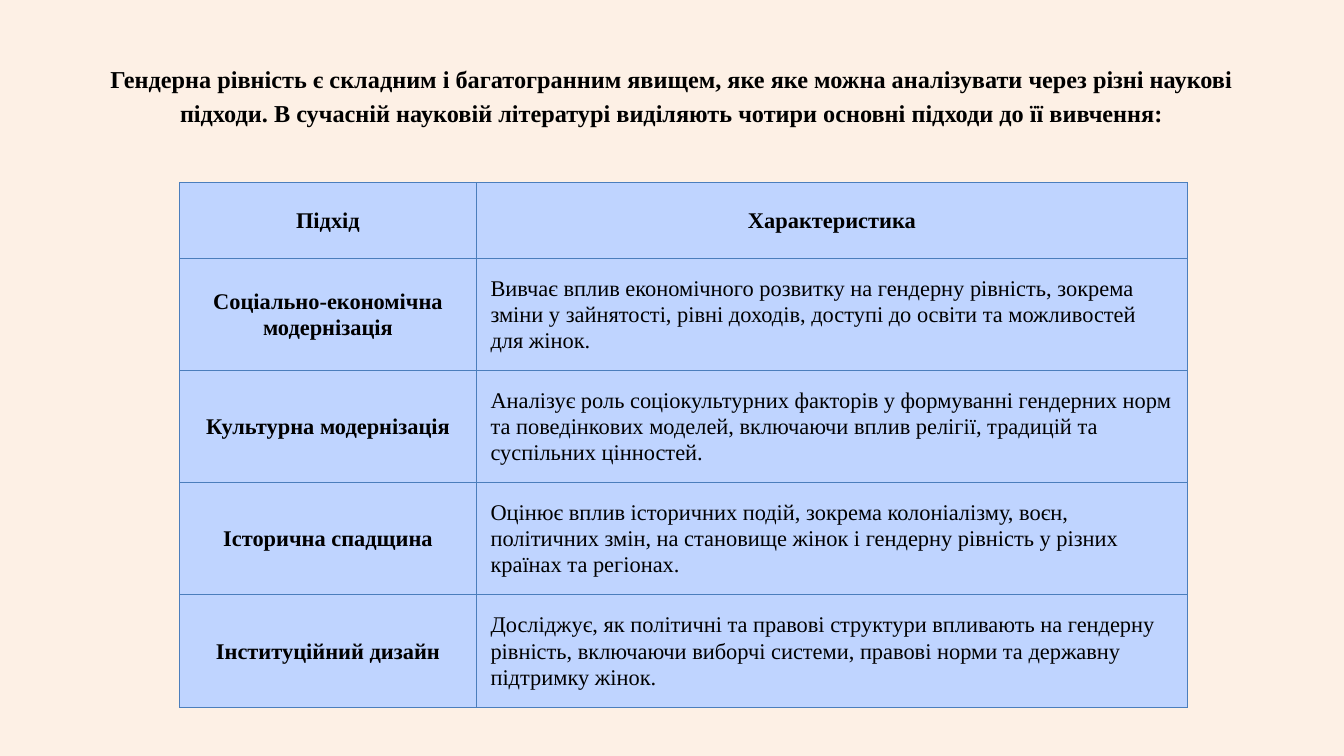
import dataclasses

import lxml.etree
import pptx
import pptx.dml.color
import pptx.enum.text
import pptx.oxml.ns
import pptx.util

Inches = pptx.util.Inches
Pt = pptx.util.Pt
ALIGN = pptx.enum.text.PP_ALIGN
ANCHOR = pptx.enum.text.MSO_ANCHOR

TITLE = (
    "Гендерна рівність є складним і багатогранним явищем, яке яке можна аналізувати "
    "через різні наукові підходи. В сучасній науковій літературі виділяють чотири "
    "основні підходи до її вивчення:"
)
APPROACHES = [
    ("Підхід", "Характеристика"),
    (
        "Соціально-економічна модернізація",
        "Вивчає вплив економічного розвитку на гендерну рівність, зокрема зміни у "
        "зайнятості, рівні доходів, доступі до освіти та можливостей для жінок.",
    ),
    (
        "Культурна модернізація",
        "Аналізує роль соціокультурних факторів у формуванні гендерних норм та "
        "поведінкових моделей, включаючи вплив релігії, традицій та суспільних цінностей.",
    ),
    (
        "Історична спадщина",
        "Оцінює вплив історичних подій, зокрема колоніалізму, воєн, політичних змін, "
        "на становище жінок і гендерну рівність у різних країнах та регіонах.",
    ),
    (
        "Інституційний дизайн",
        "Досліджує, як політичні та правові структури впливають на гендерну рівність, "
        "включаючи виборчі системи, правові норми та державну підтримку жінок.",
    ),
]


@dataclasses.dataclass(frozen=True)
class Theme:
    """Colours, font and type sizes of the deck."""

    font: str = "Times New Roman"
    ink: str = "000000"
    paper: str = "FDEADA"
    paper_opacity: int = 68
    cell: str = "BFD4FF"
    border: str = "4B7EBC"
    border_width: float = 0.75
    title_size: float = 26
    title_leading: float = 36.4
    cell_size: float = 24
    cell_leading: float = 28


def rgb(value):
    """Return the colour for a hexadecimal value."""
    return pptx.dml.color.RGBColor.from_string(value)


def write_text(frame, text, *, font, size, leading, color, bold=False, align=ALIGN.LEFT):
    """Fill a text frame with one formatted paragraph."""
    para = frame.paragraphs[0]
    para.alignment = align
    para.line_spacing = Pt(leading)
    span = para.add_run()
    span.text = text
    span.font.name = font
    span.font.size = Pt(size)
    span.font.bold = bold
    span.font.color.rgb = rgb(color)


class SlideBuilder:
    """Holds the theme and the current slide."""

    def __init__(self, page, theme):
        """Keep the page and its theme."""
        self.page = page
        self.theme = theme

    def background(self):
        """Tint the page with the translucent paper colour."""
        fill = self.page.background.fill
        fill.solid()
        fill.fore_color.rgb = rgb(self.theme.paper)
        color = next(self.page.background._cSld.iter(pptx.oxml.ns.qn("a:srgbClr")))
        alpha = lxml.etree.SubElement(color, pptx.oxml.ns.qn("a:alpha"))
        alpha.set("val", str(self.theme.paper_opacity * 1000))

    def title(self, text, left, top, width, height):
        """Place and fill the title placeholder."""
        box = self.page.shapes.title
        box.left, box.top = Inches(left), Inches(top)
        box.width, box.height = Inches(width), Inches(height)
        frame = box.text_frame
        frame.margin_left = frame.margin_right = frame.margin_top = frame.margin_bottom = 0
        frame.word_wrap = True
        frame.auto_size = pptx.enum.text.MSO_AUTO_SIZE.SHAPE_TO_FIT_TEXT
        frame.vertical_anchor = ANCHOR.TOP
        write_text(frame, text, font=self.theme.font, size=self.theme.title_size,
                   leading=self.theme.title_leading, color=self.theme.ink,
                   bold=True, align=ALIGN.CENTER)

    def borders(self, cell):
        """Draw a thin line on each side of a cell."""
        properties = cell._tc.get_or_add_tcPr()
        for side in ("a:lnL", "a:lnR", "a:lnT", "a:lnB"):
            line = lxml.etree.SubElement(properties, pptx.oxml.ns.qn(side))
            line.set("w", str(Pt(self.theme.border_width)))
            fill = lxml.etree.SubElement(line, pptx.oxml.ns.qn("a:solidFill"))
            color = lxml.etree.SubElement(fill, pptx.oxml.ns.qn("a:srgbClr"))
            color.set("val", self.theme.border)

    def cell(self, cell, text, heading):
        """Format one table cell and write its text."""
        inset = Inches(0.21)
        cell.margin_left = cell.margin_right = cell.margin_top = cell.margin_bottom = inset
        cell.vertical_anchor = ANCHOR.MIDDLE
        self.borders(cell)
        cell.fill.solid()
        cell.fill.fore_color.rgb = rgb(self.theme.cell)
        write_text(cell.text_frame, text, font=self.theme.font, size=self.theme.cell_size,
                   leading=self.theme.cell_leading, color=self.theme.ink, bold=heading,
                   align=ALIGN.CENTER if heading else ALIGN.LEFT)

    def table(self, rows, left, top, widths, heights):
        """Add a table whose first row and column are headings."""
        table = self.page.shapes.add_table(
            len(rows), len(widths), Inches(left), Inches(top),
            Inches(sum(widths)), Inches(sum(heights)),
        ).table
        table.first_row = table.horz_banding = False
        for column, width in zip(table.columns, widths):
            column.width = Inches(width)
        for row, height in zip(table.rows, heights):
            row.height = Inches(height)
        for row_index, row in enumerate(rows):
            for column_index, text in enumerate(row):
                heading = row_index == 0 or column_index == 0
                self.cell(table.cell(row_index, column_index), text, heading)


def main():
    """Build the slide and save the deck."""
    deck = pptx.Presentation()
    deck.slide_width, deck.slide_height = Inches(20), Inches(11.25)
    builder = SlideBuilder(deck.slides.add_slide(deck.slide_layouts[5]), Theme())
    builder.background()
    builder.title(TITLE, 1.22, 0.89, 17.56, 1.54)
    heights = [1.12] + [1.67] * (len(APPROACHES) - 1)
    builder.table(APPROACHES, 2.67, 2.72, [4.42, 10.58], heights)
    deck.save("out.pptx")


if __name__ == "__main__":
    main()
